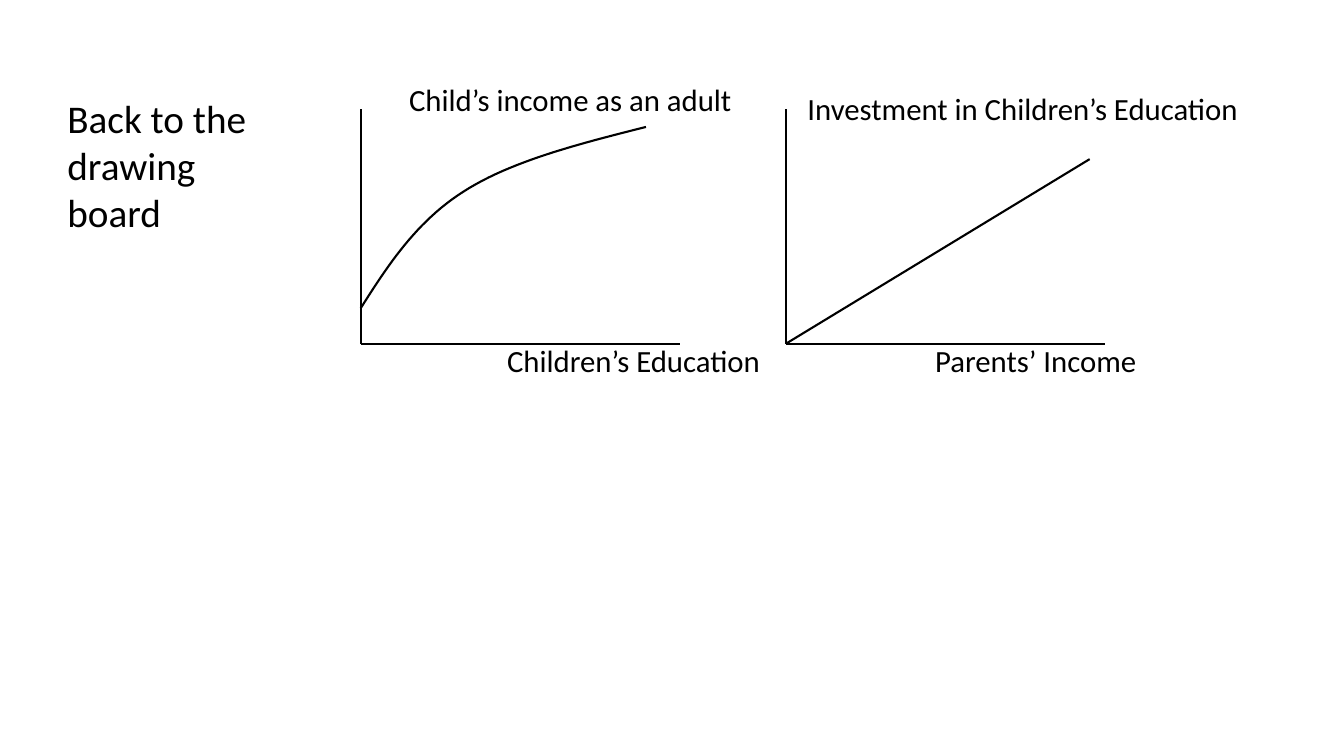
from dataclasses import dataclass

from lxml.etree import SubElement
from pptx import Presentation
from pptx.dml.color import RGBColor
from pptx.enum.shapes import MSO_CONNECTOR as Connector
from pptx.enum.text import MSO_AUTO_SIZE as AutoSize
from pptx.oxml.ns import qn
from pptx.slide import Slide
from pptx.util import Cm, Length, Pt

Point = tuple[float, float]


@dataclass(frozen=True)
class Theme:
    font: str = "Calibri"
    ink: RGBColor = RGBColor(0, 0, 0)
    title_size: Length = Pt(28)
    label_size: Length = Pt(22)
    axis_width: Length = Pt(1.25)
    curve_width: Length = Pt(1.5)


@dataclass(frozen=True)
class Label:
    text: str
    left: float
    top: float
    width: float


@dataclass(frozen=True)
class Graph:
    origin_x: float
    vertical_label: Label
    horizontal_label: Label


THEME = Theme()
AXIS_TOP = 2.75
AXIS_BOTTOM = 8.66
AXIS_LENGTH = 8.04
LABEL_HEIGHT = 0.94
CURVE_STEPS = 24

GRAPHS = [
    Graph(
        9.09,
        Label("Child’s income as an adult", 10.31, 2.03, 8.2),
        Label("Children’s Education", 12.78, 8.61, 6.43),
    ),
    Graph(
        19.81,
        Label("Investment in Children’s Education", 20.35, 2.26, 10.95),
        Label("Parents’ Income", 23.57, 8.61, 5.13),
    ),
]
INCOME_CURVE: list[list[Point]] = [
    [(9.09, 7.77), (9.78, 6.68), (10.49, 5.59), (11.68, 4.83)],
    [(11.68, 4.83), (12.88, 4.06), (14.58, 3.63), (16.28, 3.2)],
]
INVESTMENT_LINE: list[Point] = [(19.84, 8.64), (27.46, 4.01)]


def add_line(slide: Slide, start: Point, end: Point, width: Length) -> None:
    ends = [Cm(value) for value in (*start, *end)]
    line = slide.shapes.add_connector(Connector.STRAIGHT, *ends)
    line.line.color.rgb = THEME.ink
    line.line.width = width
    SubElement(line._element.spPr, qn("a:effectLst"))


def bezier_point(controls: list[Point], t: float) -> Point:
    weights = ((1 - t) ** 3, 3 * t * (1 - t) ** 2, 3 * t**2 * (1 - t), t**3)
    x, y = (sum(w * v for w, v in zip(weights, axis)) for axis in zip(*controls))
    return Cm(x), Cm(y)


def add_curve(slide: Slide, segments: list[list[Point]]) -> None:
    start = bezier_point(segments[0], 0)
    points = [
        bezier_point(controls, step / CURVE_STEPS)
        for controls in segments
        for step in range(1, CURVE_STEPS + 1)
    ]
    builder = slide.shapes.build_freeform(*start)
    builder.add_line_segments(points, close=False)
    shape = builder.convert_to_shape()
    shape.shadow.inherit = False
    shape.fill.background()
    shape.line.color.rgb = THEME.ink
    shape.line.width = THEME.curve_width


def add_text(slide: Slide, label: Label, height: float, size: Length, wrap: bool) -> None:
    box = slide.shapes.add_textbox(
        Cm(label.left), Cm(label.top), Cm(label.width), Cm(height)
    )
    frame = box.text_frame
    frame.word_wrap = wrap
    frame.auto_size = AutoSize.SHAPE_TO_FIT_TEXT
    if not wrap:
        frame.margin_left = frame.margin_right = 0
        frame.margin_top = frame.margin_bottom = 0
    paragraph = frame.paragraphs[0]
    paragraph.text = label.text
    paragraph.font.name = THEME.font
    paragraph.font.size = size
    paragraph.font.color.rgb = THEME.ink


def add_graph(slide: Slide, graph: Graph) -> None:
    origin = (graph.origin_x, AXIS_BOTTOM)
    add_line(slide, (graph.origin_x, AXIS_TOP), origin, THEME.axis_width)
    add_line(slide, origin, (graph.origin_x + AXIS_LENGTH, AXIS_BOTTOM), THEME.axis_width)
    for label in (graph.vertical_label, graph.horizontal_label):
        add_text(slide, label, LABEL_HEIGHT, THEME.label_size, wrap=False)


def main() -> None:
    presentation = Presentation()
    presentation.slide_width = Cm(33.87)
    presentation.slide_height = Cm(19.05)
    slide = presentation.slides.add_slide(presentation.slide_layouts[6])

    title = Label("Back to the drawing board", 1.45, 2.26, 5.31)
    add_text(slide, title, 5.05, THEME.title_size, wrap=True)
    for graph in GRAPHS:
        add_graph(slide, graph)
    add_curve(slide, INCOME_CURVE)
    add_line(slide, *INVESTMENT_LINE, THEME.curve_width)

    presentation.save("out.pptx")


if __name__ == "__main__":
    main()
